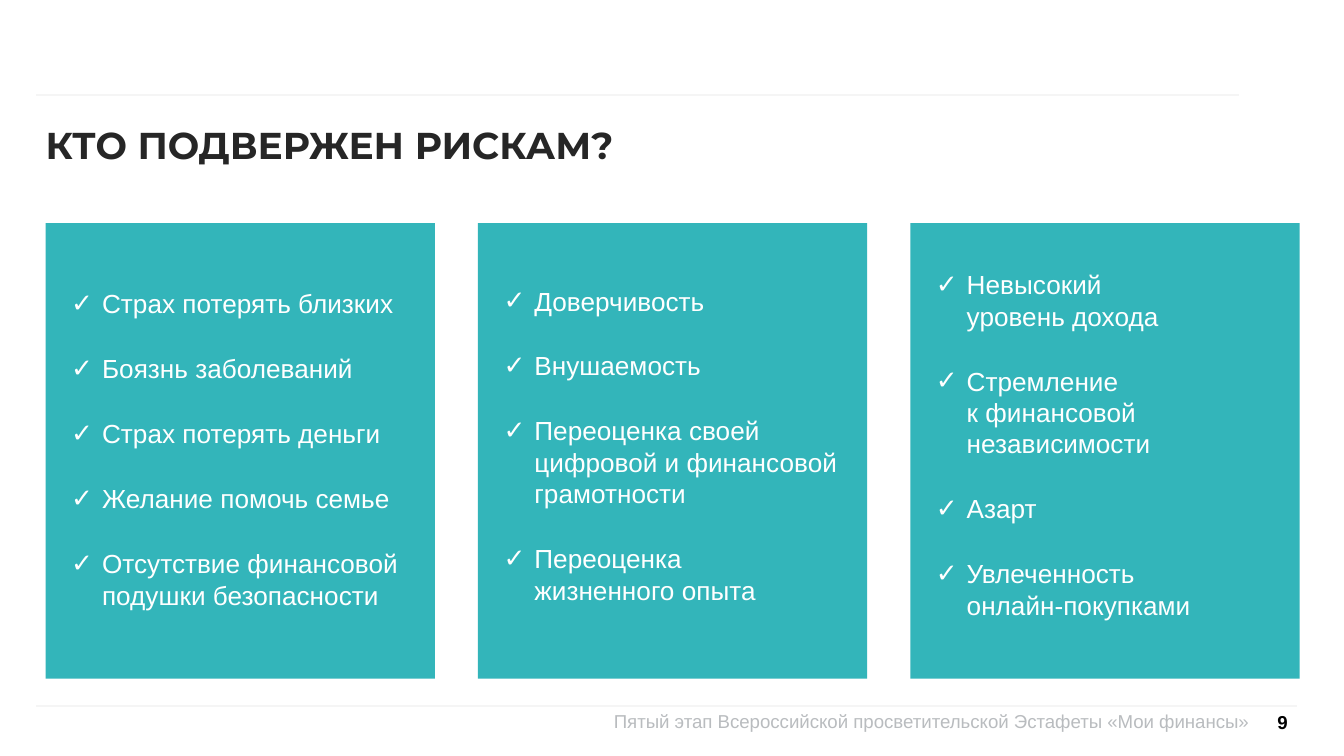
from dataclasses import dataclass

from lxml import etree
from pptx import Presentation
from pptx.dml.color import RGBColor
from pptx.enum.shapes import MSO_CONNECTOR, MSO_SHAPE
from pptx.enum.text import MSO_ANCHOR, MSO_AUTO_SIZE, PP_ALIGN
from pptx.oxml.ns import qn
from pptx.util import Inches, Pt

STRAIGHT = MSO_CONNECTOR.STRAIGHT
RECTANGLE = MSO_SHAPE.RECTANGLE
TOP, MIDDLE = MSO_ANCHOR.TOP, MSO_ANCHOR.MIDDLE
LEFT, RIGHT = PP_ALIGN.LEFT, PP_ALIGN.RIGHT
NO_AUTOFIT = MSO_AUTO_SIZE.NONE


@dataclass(frozen=True)
class Theme:
    heading_font: str = "Montserrat"
    body_font: str = "Arial"
    title: str = "262626"
    card: str = "33B5BA"
    card_text: str = "FFFFFF"
    rule: str = "F5F5F5"
    footer: str = "B9BCBF"
    number: str = "000000"
    title_size: int = 20
    body_size: int = 14
    footer_size: int = 10
    item_gap: int = 18


THEME = Theme()

# List offset from the card top, list height and items; a line feed is a line break
RISK_GROUPS = [
    (0.48, 2.42, [
        "Страх потерять близких",
        "Боязнь заболеваний",
        "Страх потерять деньги",
        "Желание помочь семье",
        "Отсутствие финансовой подушки безопасности",
    ]),
    (0.46, 2.44, [
        "Доверчивость",
        "Внушаемость",
        "Переоценка своей цифровой и финансовой грамотности",
        "Переоценка \nжизненного опыта",
    ]),
    (0.34, 2.66, [
        "Невысокий \nуровень дохода",
        "Стремление \nк финансовой независимости",
        "Азарт",
        "Увлеченность \nонлайн-покупками",
    ]),
]


def set_frame(tf, anchor=TOP, inset=0, wrap=True):
    tf.auto_size = NO_AUTOFIT
    tf.word_wrap = wrap
    tf.vertical_anchor = anchor
    tf.margin_left = tf.margin_right = Inches(inset)
    tf.margin_top = tf.margin_bottom = Inches(inset)


def add_text(p, text, size, color, font=THEME.body_font, bold=False):
    for i, line in enumerate(text.split("\n")):
        if i:
            p.add_line_break()
        r = p.add_run()
        r.text = line
        r.font.name = font
        r.font.size = Pt(size)
        r.font.bold = bold
        r.font.color.rgb = RGBColor.from_string(color)


def add_box(s, x, y, w, h, **frame):
    tf = s.shapes.add_textbox(Inches(x), Inches(y), Inches(w), Inches(h)).text_frame
    set_frame(tf, **frame)
    return tf


def add_rule(s, x1, x2, y):
    line = s.shapes.add_connector(STRAIGHT, Inches(x1), Inches(y), Inches(x2), Inches(y))
    line.line.color.rgb = RGBColor.from_string(THEME.rule)
    line.line.width = Pt(1)
    etree.SubElement(line._element.spPr, qn("a:effectLst"))


def add_check_bullet(p, indent):
    pPr = p._p.get_or_add_pPr()
    pPr.set("marL", str(Inches(indent)))
    pPr.set("indent", str(-Inches(indent)))
    color = etree.SubElement(pPr, qn("a:buClr"))
    etree.SubElement(color, qn("a:srgbClr"), val=THEME.card_text)
    etree.SubElement(pPr, qn("a:buFont"), typeface=THEME.body_font)
    etree.SubElement(pPr, qn("a:buChar"), char="✓")


def add_title(s, x, y, w, h, text):
    title = s.shapes.title
    title.left, title.top = Inches(x), Inches(y)
    title.width, title.height = Inches(w), Inches(h)
    set_frame(title.text_frame)
    p = title.text_frame.paragraphs[0]
    p.alignment = LEFT
    p.line_spacing = 0.9
    add_text(p, text, THEME.title_size, THEME.title, THEME.heading_font, bold=True)


def add_card(s, x, y, w, h, list_offset, list_h, items):
    card = s.shapes.add_shape(RECTANGLE, Inches(x), Inches(y), Inches(w), Inches(h))
    card.shadow.inherit = False
    card.fill.solid()
    card.fill.fore_color.rgb = RGBColor.from_string(THEME.card)
    card.line.fill.background()

    side = 0.19
    tf = add_box(s, x + side, y + list_offset, w - 2 * side, list_h)
    for i, item in enumerate(items):
        p = tf.add_paragraph() if i else tf.paragraphs[0]
        add_check_bullet(p, indent=0.23)
        if i:
            p.space_before = Pt(THEME.item_gap)
        add_text(p, item, THEME.body_size, THEME.card_text)


def add_cards(s, x, y, w, h, groups, gap):
    card_w = (w - gap * (len(groups) - 1)) / len(groups)
    for i, group in enumerate(groups):
        add_card(s, x + i * (card_w + gap), y, card_w, h, *group)


def add_footer(s, x, y, w, text, number):
    add_rule(s, x, x + w, y)
    p = add_box(s, x + 3.31, y + 0.03, 5.71, 0.35).paragraphs[0]
    p.alignment = RIGHT
    add_text(p, text, THEME.footer_size, THEME.footer)

    tf = add_box(s, x + w - 0.2, y - 0.02, 0.19, 0.28, anchor=MIDDLE, inset=0.06, wrap=False)
    p = tf.paragraphs[0]
    p.alignment = RIGHT
    add_text(p, number, THEME.footer_size, THEME.number, bold=True)


def main():
    prs = Presentation()
    prs.slide_width = Inches(10)
    prs.slide_height = prs.slide_width * 9 // 16
    s = prs.slides.add_slide(prs.slide_layouts[5])
    add_rule(s, 0.27, 9.22, 0.71)
    add_title(s, 0.34, 0.95, 5.88, 0.33, "КТО ПОДВЕРЖЕН РИСКАМ?")
    add_cards(s, 0.34, 1.66, 9.33, 3.39, RISK_GROUPS, gap=0.32)
    add_footer(s, 0.27, 5.25, 9.38,
               "Пятый этап Всероссийской просветительской Эстафеты «Мои финансы»", "9")
    prs.save("out.pptx")


if __name__ == "__main__":
    main()
